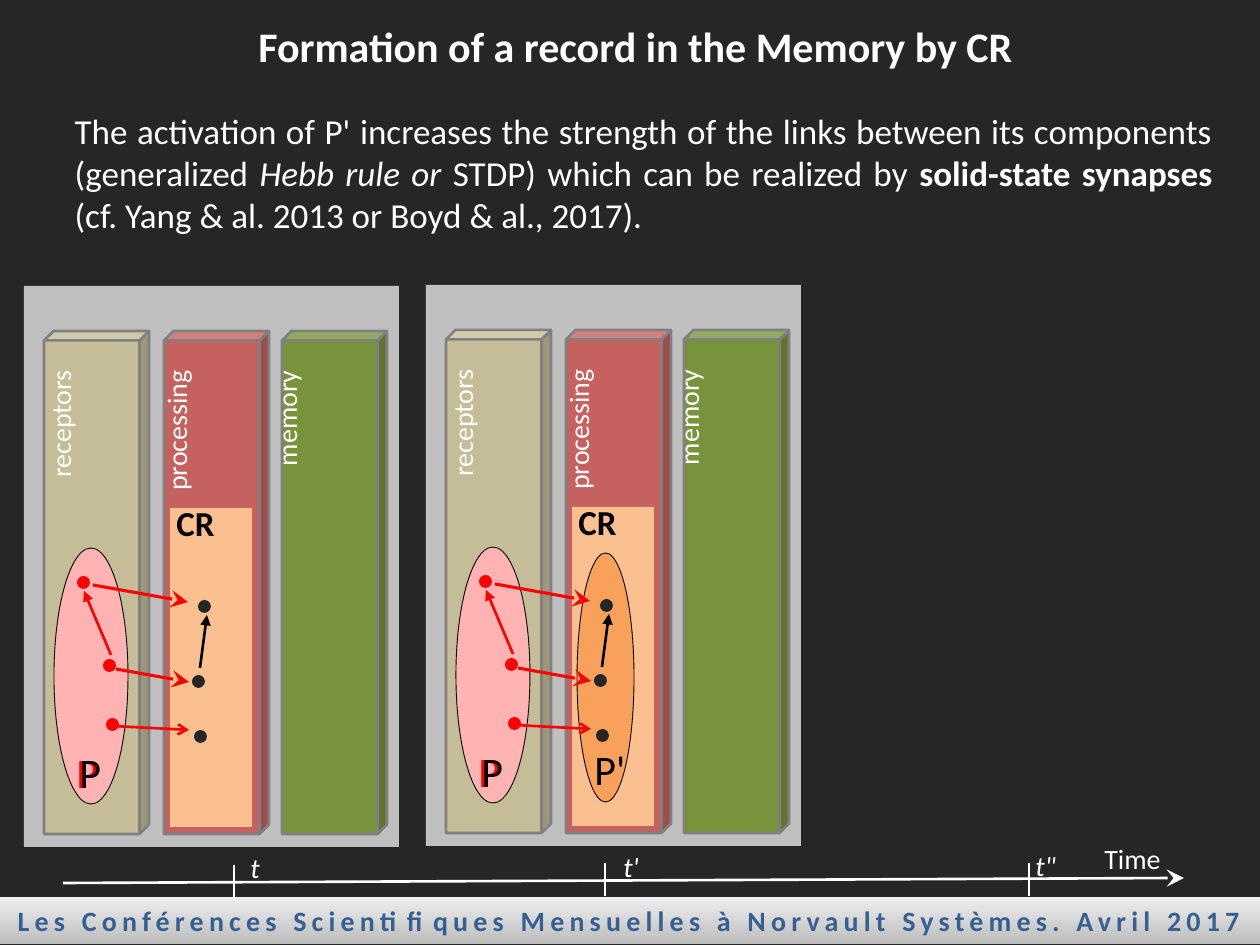
from dataclasses import dataclass

from lxml import etree
from pptx import Presentation
from pptx.dml.color import RGBColor
from pptx.enum.shapes import MSO_CONNECTOR, MSO_SHAPE
from pptx.enum.text import MSO_ANCHOR, MSO_AUTO_SIZE, PP_ALIGN
from pptx.oxml.ns import qn
from pptx.util import Emu, Pt

RECT, CUBE, OVAL = MSO_SHAPE.RECTANGLE, MSO_SHAPE.CUBE, MSO_SHAPE.OVAL
STRAIGHT = MSO_CONNECTOR.STRAIGHT
LEFT, CENTER = PP_ALIGN.LEFT, PP_ALIGN.CENTER
RIGHT, JUSTIFY = PP_ALIGN.RIGHT, PP_ALIGN.JUSTIFY
PX_PER_INCH = 126


@dataclass(frozen=True)
class Theme:
    font: str = "Calibri"
    background: str = "262626"
    white: str = "FFFFFF"
    black: str = "000000"
    red: str = "FF0000"
    panel: str = "BFBFBF"
    edge: str = "808080"
    receptors: str = "C4BD97"
    processing: str = "C5615F"
    memory: str = "77933C"
    cr: str = "FAC090"
    pattern: str = "FFB3B3"
    activated: str = "F8A15A"
    footer_text: str = "376092"
    footer_dark: str = "BDBDBD"
    footer_light: str = "EEEEEE"
    title_size: int = 24
    body_size: int = 20
    label_size: int = 16


THEME = Theme()


def px(length):
    return Emu(round(length * 914400 / PX_PER_INCH))


def rgb(color):
    return RGBColor.from_string(color)


def add_run(paragraph, text, size, color, bold=False, italic=False):
    run = paragraph.add_run()
    run.text = text
    font = run.font
    font.name, font.size, font.bold, font.italic = THEME.font, Pt(size), bold, italic
    font.color.rgb = rgb(color)
    return run


def add_label(slide, box, text, size, color, align=LEFT, vertical=False, **style):
    label = slide.shapes.add_textbox(*map(px, box))
    frame = label.text_frame
    frame.word_wrap = True
    if vertical:
        frame._txBody.bodyPr.set("vert", "vert270")
    paragraph = frame.paragraphs[0]
    paragraph.alignment = align
    add_run(paragraph, text, size, color, **style)


def add_block(slide, kind, box, fill, edge=None, width=1.5):
    block = slide.shapes.add_shape(kind, *map(px, box))
    block.shadow.inherit = False
    block.fill.solid()
    block.fill.fore_color.rgb = rgb(fill)
    if edge:
        block.line.color.rgb = rgb(edge)
        block.line.width = Pt(width)
    else:
        block.line.fill.background()
    return block


def add_line(slide, start, end, color, head=None, width=1.5, head_size="med"):
    line = slide.shapes.add_connector(STRAIGHT, *map(px, (*start, *end)))
    line.line.color.rgb = rgb(color)
    line.line.width = Pt(width)
    if head:
        etree.SubElement(line.line._get_or_add_ln(), qn("a:tailEnd"),
                         type=head, w=head_size, len=head_size)
    etree.SubElement(line._element.spPr, qn("a:effectLst"))


def fill_placeholder(placeholder, box, align, size, runs):
    placeholder.left, placeholder.top, placeholder.width, placeholder.height = map(px, box)
    frame = placeholder.text_frame
    frame.auto_size = MSO_AUTO_SIZE.NONE
    frame.vertical_anchor = MSO_ANCHOR.TOP
    paragraph = frame.paragraphs[0]
    paragraph.alignment = align
    paragraph.space_before = Pt(0)
    # No bullet and no hanging indent
    properties = paragraph._p.get_or_add_pPr()
    properties.set("marL", "0")
    properties.set("indent", "0")
    etree.SubElement(properties, qn("a:buNone"))
    for text, style in runs:
        add_run(paragraph, text, size, THEME.white, **style)


def add_footer(slide, box):
    band = add_block(slide, RECT, box, THEME.footer_dark)
    band.fill.gradient()
    band.fill.gradient_angle = 90
    for stop, color in zip(band.fill.gradient_stops, (THEME.footer_dark, THEME.footer_light)):
        stop.color.rgb = rgb(color)
    band.text_frame.word_wrap = False
    paragraph = band.text_frame.paragraphs[0]
    paragraph.alignment = CENTER
    run = add_run(paragraph, "Les Conférences Scientifiques Mensuelles à Norvault Systèmes. Avril 2017",
                  THEME.label_size, THEME.footer_text, bold=True)
    run.font._element.set("spc", "300")


def add_system_panel(slide, box, activated):
    """One state of the system; activated adds the pattern P' inside the CR."""
    left, top, _, _ = box

    def at(x, y, *size):
        return (left + x, top + y, *size)

    add_block(slide, RECT, box, THEME.panel)

    # Three columns with their vertical names
    columns = (("receptors", THEME.receptors, 20, 13),
               ("processing", THEME.processing, 140, 129),
               ("memory", THEME.memory, 258, 239))
    for name, color, column_x, name_x in columns:
        column = add_block(slide, CUBE, at(column_x, 45, 105, 503), color, THEME.edge)
        column.adjustments[0] = 0.09
        add_label(slide, at(name_x, 72, 59, 208), name, THEME.label_size,
                  THEME.white, RIGHT, vertical=True)

    # Co-regulator region and patterns
    add_block(slide, RECT, at(146, 222, 82, 319), THEME.cr)
    add_label(slide, at(140, 209, 96, 55), "CR", THEME.body_size, THEME.black, bold=True)
    add_block(slide, OVAL, at(30, 262, 74, 256), THEME.pattern, THEME.black, 0.5)
    for x, color in ((40, THEME.red), (43, THEME.black)):
        add_label(slide, at(x, 454, 62, 63), "P", THEME.title_size, color)
    if activated:
        add_block(slide, OVAL, at(151, 268, 57, 249), THEME.activated, THEME.black, 0.5)
        add_label(slide, at(156, 452, 62, 63), "P'", THEME.title_size, THEME.black)

    # Links inside the patterns, then from receptors to CR
    add_line(slide, at(87, 369), at(60, 305), THEME.red, "triangle")
    add_line(slide, at(176, 382), at(183, 329), THEME.black, "triangle")
    add_line(slide, at(89, 440), at(165, 444), THEME.red, "arrow")
    for start, end in (((69, 299), (164, 316)), ((92, 383), (165, 396))):
        add_line(slide, at(*start), at(*end), THEME.red, "stealth", 1.75, "lg")

    # Components of each pattern
    components = {THEME.red: ((82, 432), (79, 373), (53, 290)),
                  THEME.background: ((170, 444), (168, 389), (174, 314))}
    for color, places in components.items():
        for place in places:
            add_block(slide, OVAL, at(*place, 13, 13), color)


def add_timeline(slide, box):
    left, top, width, _ = box
    add_line(slide, (left, top + 48), (left + width, top + 43), THEME.white,
             "stealth", head_size="lg")
    # Instants: tick position, tick top, label position
    instants = (("t", 171, 30, 175, 9), ("t'", 542, 28, 548, 8), ('t"', 966, 28, 960, 7))
    for name, tick_x, tick_y, name_x, name_y in instants:
        add_line(slide, (left + tick_x, top + tick_y),
                 (left + tick_x, top + tick_y + 33), THEME.white)
        add_label(slide, (left + name_x, top + name_y, 64, 47), name,
                  THEME.label_size, THEME.white, italic=True)
    add_label(slide, (left + 1029, top, 102, 47), "Time", THEME.label_size, THEME.white)


def main():
    deck = Presentation()
    deck.slide_width, deck.slide_height = px(1260), px(945)
    slide = deck.slides.add_slide(deck.slide_layouts[1])
    slide.background.fill.solid()
    slide.background.fill.fore_color.rgb = rgb(THEME.background)

    # Title and explanation
    title, explanation = slide.placeholders
    fill_placeholder(title, (132, 14, 1007, 63), CENTER, THEME.title_size,
                     [("Formation of a record in the Memory by CR", {"bold": True})])
    fill_placeholder(explanation, (62, 103, 1163, 140), JUSTIFY, THEME.body_size, [
        ("The activation of P' increases the strength of the links between its "
         "components (generalized ", {}),
        ("Hebb rule or ", {"italic": True}),
        ("STDP) which can be realized by ", {}),
        ("solid-state synapses", {"bold": True}),
        (" (cf. Yang & al. 2013 or Boyd & al., 2017).", {}),
    ])

    # Footer, both states and time axis
    add_footer(slide, (0, 897, 1260, 47))
    add_system_panel(slide, (24, 286, 375, 561), activated=False)
    add_system_panel(slide, (426, 285, 375, 561), activated=True)
    add_timeline(slide, (63, 835, 1121, 64))
    deck.save("out.pptx")


if __name__ == "__main__":
    main()
